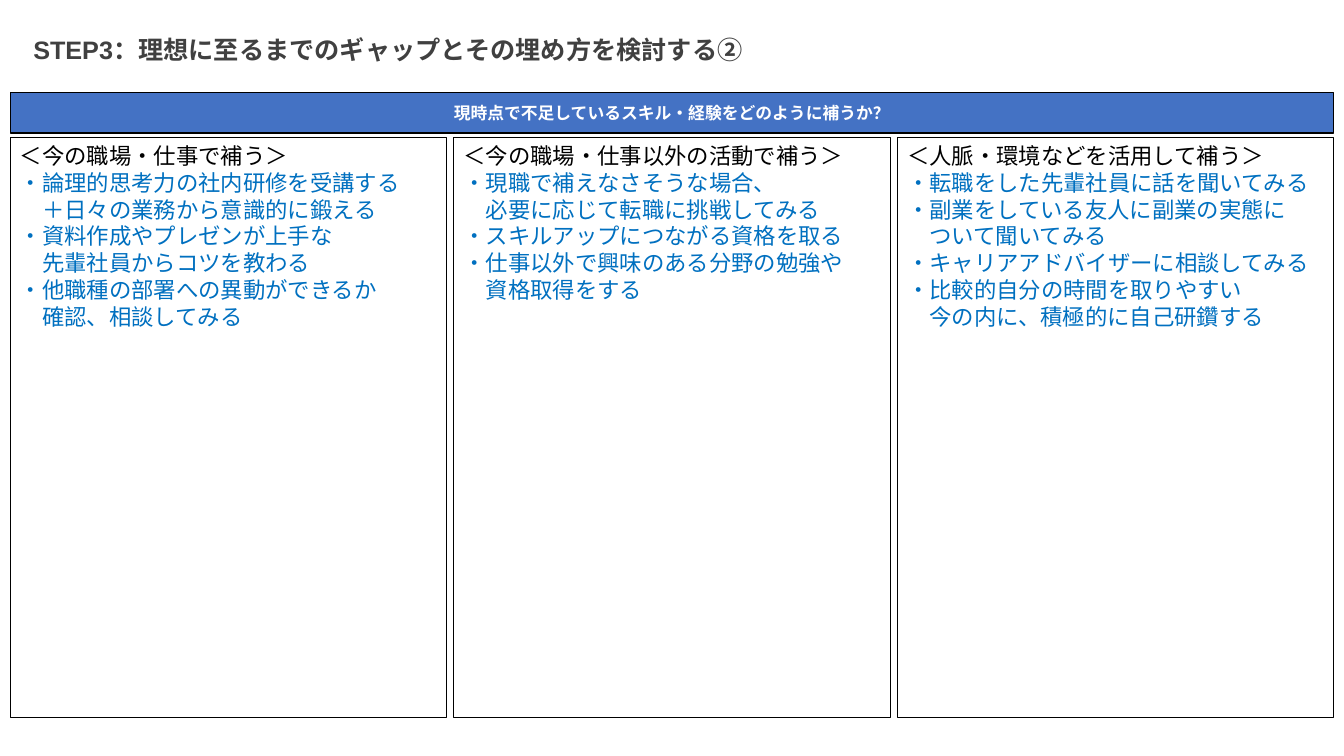
from lxml import etree
from pptx import Presentation
from pptx.dml.color import RGBColor
from pptx.enum.shapes import MSO_SHAPE
from pptx.enum.text import MSO_ANCHOR, PP_ALIGN
from pptx.oxml.ns import qn
from pptx.util import Inches, Pt

RECT = MSO_SHAPE.RECTANGLE
LEFT, CENTER = PP_ALIGN.LEFT, PP_ALIGN.CENTER
TOP, MIDDLE = MSO_ANCHOR.TOP, MSO_ANCHOR.MIDDLE

ARIAL, NOTO = "Arial", "Noto Sans CJK JP"
BLACK, WHITE, GRAY = "000000", "FFFFFF", "404040"
BLUE, BAND = "0070C0", "4472C4"

TITLE = "STEP3：理想に至るまでのギャップとその埋め方を検討する②"
ASK = "現時点で不足しているスキル・経験をどのように補うか？"
PANELS = [
    ("＜今の職場・仕事で補う＞", ARIAL, [
        "・論理的思考力の社内研修を受講する",
        "　＋日々の業務から意識的に鍛える",
        "・資料作成やプレゼンが上手な",
        "　先輩社員からコツを教わる",
        "・他職種の部署への異動ができるか",
        "　確認、相談してみる",
    ]),
    ("＜今の職場・仕事以外の活動で補う＞", NOTO, [
        "・現職で補えなさそうな場合、",
        "　必要に応じて転職に挑戦してみる",
        "・スキルアップにつながる資格を取る",
        "・仕事以外で興味のある分野の勉強や",
        "　資格取得をする",
    ]),
    ("＜人脈・環境などを活用して補う＞", ARIAL, [
        "・転職をした先輩社員に話を聞いてみる",
        "・副業をしている友人に副業の実態に",
        "　ついて聞いてみる",
        "・キャリアアドバイザーに相談してみる",
        "・比較的自分の時間を取りやすい",
        "　今の内に、積極的に自己研鑽する",
    ]),
]


def color(code):
    return RGBColor.from_string(code)


def write(para, text, size, tint, face=ARIAL, bold=False, align=LEFT):
    """Fill a paragraph, using one face for Latin and Japanese letters."""
    para.text = text
    para.alignment = align
    font = para.font
    font.size, font.bold, font.name = Pt(size), bold, face
    font.color.rgb = color(tint)
    props = para._p.pPr.find(qn("a:defRPr"))
    etree.SubElement(props, qn("a:ea")).set("typeface", face)


def add_box(slide, box, fill, anchor):
    shape = slide.shapes.add_shape(RECT, *map(Inches, box))
    shape.shadow.inherit = False
    shape.fill.solid()
    shape.fill.fore_color.rgb = color(fill)
    shape.line.color.rgb = color(BLACK)
    shape.line.width = Pt(0.75)
    shape.text_frame.vertical_anchor = anchor
    return shape.text_frame


def add_title(slide, box):
    title = slide.shapes.title
    title.left, title.top, title.width, title.height = map(Inches, box)
    frame = title.text_frame
    frame.vertical_anchor = TOP
    frame.word_wrap = True
    write(frame.paragraphs[0], TITLE, 18, GRAY, bold=True)


def add_band(slide, box):
    frame = add_box(slide, box, BAND, MIDDLE)
    frame.word_wrap = False
    write(frame.paragraphs[0], ASK, 12, WHITE, bold=True, align=CENTER)


def add_panel(slide, box, head, face, lines):
    frame = add_box(slide, box, WHITE, TOP)
    frame.word_wrap = True
    write(frame.paragraphs[0], head, 16, BLACK)
    for line in lines:
        write(frame.add_paragraph(), line, 16, BLUE, face)


def add_panels(slide, box, gap):
    left, top, width, height = box
    count = len(PANELS)
    wide = (width - gap * (count - 1)) / count
    for i, panel in enumerate(PANELS):
        add_panel(slide, (left + i * (wide + gap), top, wide, height), *panel)


def main():
    deck = Presentation()
    deck.slide_width, deck.slide_height = Inches(13.33), Inches(7.5)
    slide = deck.slides.add_slide(deck.slide_layouts[5])
    add_title(slide, (0.23, 0.29, 8.86, 0.4))
    add_band(slide, (0.1, 0.92, 13.13, 0.4))
    add_panels(slide, (0.1, 1.36, 13.13, 5.76), 0.07)
    deck.save("out.pptx")


if __name__ == "__main__":
    main()
